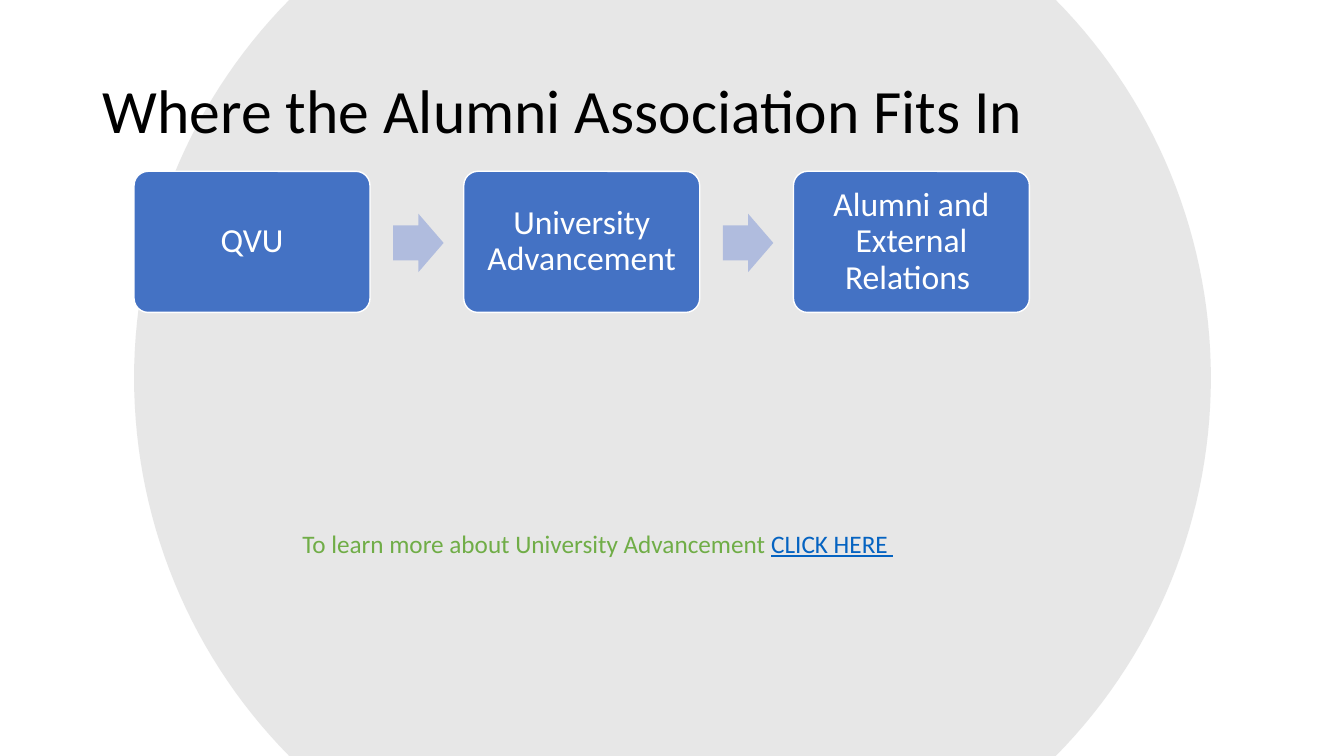
from math import asin, cos, pi, sin

from lxml.etree import SubElement
from pptx import Presentation
from pptx.dml.color import RGBColor
from pptx.enum.shapes import MSO_SHAPE
from pptx.enum.text import MSO_ANCHOR, MSO_AUTO_SIZE, PP_ALIGN
from pptx.oxml.ns import qn
from pptx.util import Inches, Pt

COLORS = {
    "black": "000000",
    "white": "FFFFFF",
    "gray": "D9D9D9",
    "blue": "4472C4",
    "arrow": "B0BCDE",
    "green": "70AD47",
    "link": "0563C1",
}


class SlideBuilder:
    def __init__(self, slide, font="Calibri"):
        self.slide = slide
        self.font = font

    def color(self, name):
        return RGBColor.from_string(COLORS[name])

    def paint(self, sp, fill, line=None):
        sp.shadow.inherit = False
        sp.fill.solid()
        sp.fill.fore_color.rgb = self.color(fill)
        if line:
            sp.line.color.rgb = self.color(line)
            sp.line.width = Pt(1)
        else:
            sp.line.fill.background()

    def run(self, p, text, size, color, underline=None):
        r = p.add_run()
        r.text = text
        r.font.name = self.font
        r.font.size = Pt(size)
        r.font.color.rgb = self.color(color)
        r.font.underline = underline

    def clipped_circle(self, cx, cy, radius, fill, opacity, steps=60):
        # Two side arcs, joined along the slide's top and bottom edges
        limit = asin(cy / radius)
        angles = [-limit + 2 * limit * i / steps for i in range(steps + 1)]
        angles += [a + pi for a in angles]
        points = [(Inches(cx + radius * cos(a)), Inches(cy + radius * sin(a)))
                  for a in angles]
        builder = self.slide.shapes.build_freeform(*points[0])
        builder.add_line_segments(points[1:], close=True)
        sp = builder.convert_to_shape()
        self.paint(sp, fill)
        clr = sp._element.spPr.find(qn("a:solidFill"))[0]
        SubElement(clr, qn("a:alpha")).set("val", str(opacity * 1000))
        # Send behind the title
        self.slide.shapes._spTree.insert(2, sp._element)

    def title(self, text, left, top, width, height):
        sp = self.slide.shapes.title
        sp.left, sp.top = Inches(left), Inches(top)
        sp.width, sp.height = Inches(width), Inches(height)
        tf = sp.text_frame
        tf.auto_size = MSO_AUTO_SIZE.NONE
        tf.vertical_anchor = MSO_ANCHOR.MIDDLE
        p = tf.paragraphs[0]
        p.alignment = PP_ALIGN.LEFT
        p.line_spacing = 0.9
        self.run(p, text, 44, "black")

    def shape(self, kind, left, top, width, height, adjustments, fill, line=None):
        sp = self.slide.shapes.add_shape(
            kind, Inches(left), Inches(top), Inches(width), Inches(height))
        for i, value in enumerate(adjustments):
            sp.adjustments[i] = value
        self.paint(sp, fill, line)
        return sp

    def box(self, text, left, top, width, height):
        sp = self.shape(MSO_SHAPE.ROUNDED_RECTANGLE, left, top, width, height,
                        [0.1], "blue", "white")
        tf = sp.text_frame
        tf.word_wrap = True
        tf.vertical_anchor = MSO_ANCHOR.MIDDLE
        tf.margin_left = tf.margin_right = Inches(0.1)
        tf.margin_top = tf.margin_bottom = Inches(0.1)
        p = tf.paragraphs[0]
        p.alignment = PP_ALIGN.CENTER
        p.line_spacing = 0.9
        self.run(p, text, 24, "white")

    def arrow(self, left, top, width, height):
        self.shape(MSO_SHAPE.RIGHT_ARROW, left, top, width, height,
                   [0.6, 0.5], "arrow")

    def text(self, runs, left, top, width, height, size):
        sp = self.slide.shapes.add_textbox(
            Inches(left), Inches(top), Inches(width), Inches(height))
        tf = sp.text_frame
        tf.word_wrap = True
        tf.auto_size = MSO_AUTO_SIZE.SHAPE_TO_FIT_TEXT
        for text, color, underline in runs:
            self.run(tf.paragraphs[0], text, size, color, underline)


def main():
    prs = Presentation()
    prs.slide_width, prs.slide_height = Inches(13.33), Inches(7.5)
    s = SlideBuilder(prs.slides.add_slide(prs.slide_layouts[5]))

    # Background and title
    s.clipped_circle(6.67, 3.75, 5.34, "gray", 62)
    s.title("Where the Alumni Association Fits In", 0.92, 0.4, 11.5, 1.45)

    # Chain of units
    units = ["QVU", "University Advancement", "Alumni and External Relations "]
    left, top, width, height, pitch = 1.33, 1.7, 2.34, 1.4, 3.27
    for i, unit in enumerate(units):
        x = left + i * pitch
        if i:
            s.arrow(x - 0.7, 2.12, 0.5, 0.58)
        s.box(unit, x, top, width, height)

    # Pointer to further reading
    s.text([("To learn more about University Advancement ", "green", None),
            ("CLICK HERE ", "link", True)], 2.9, 5.19, 7.49, 0.4, 18)

    prs.save("out.pptx")


if __name__ == "__main__":
    main()
